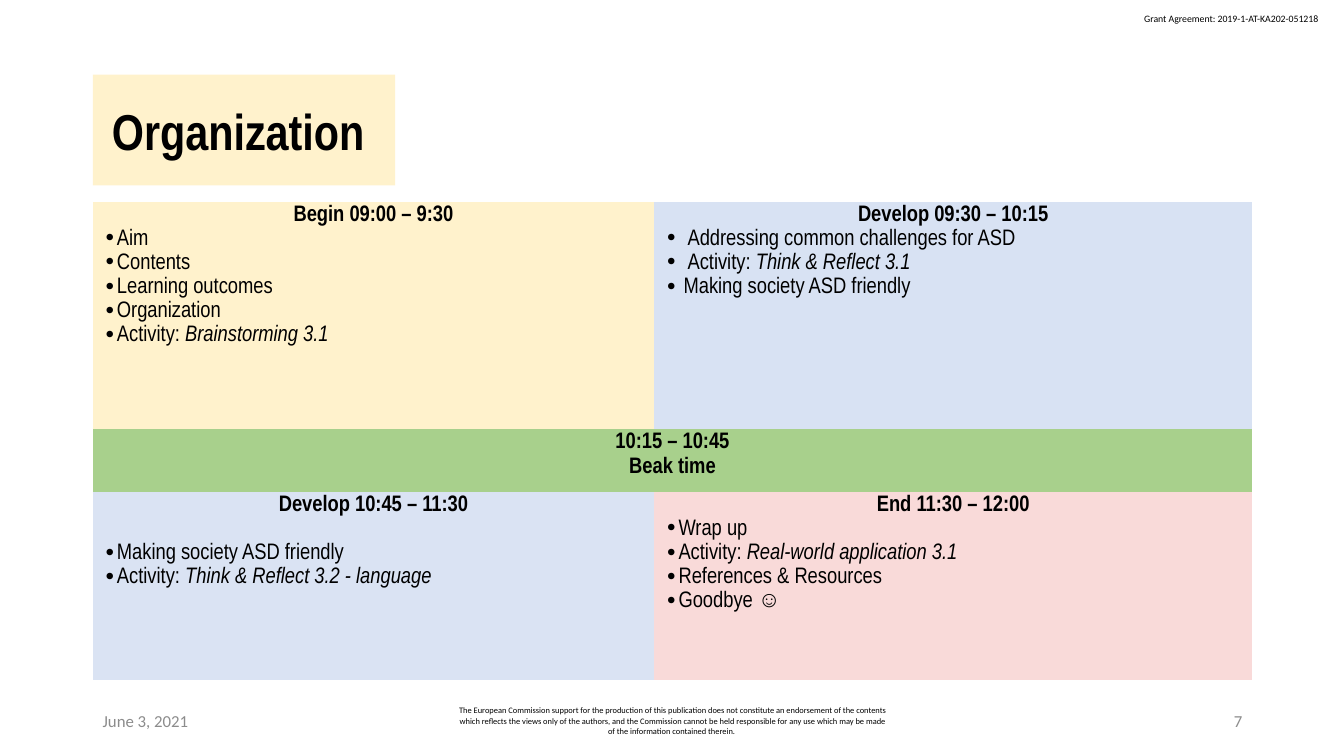
"""Build the workshop organization slide with its timetable."""
from lxml import etree
from pptx import Presentation
from pptx.dml.color import RGBColor
from pptx.enum.text import MSO_ANCHOR, MSO_AUTO_SIZE, PP_ALIGN as AL
from pptx.oxml.ns import qn
from pptx.util import Inches as In, Pt

NARROW, SANS = "Arial Narrow", "Calibri"
BLACK, GREY = "000000", "8C8C8C"
CREAM, BLUE, GREEN, PALE_BLUE, PINK = "FFF2CC", "D8E2F3", "A8D08C", "DAE3F3", "F9DAD9"
LEFT, COLS, ROWS = 0.92, (5.57, 5.93), (2.26, 0.62, 1.87)
WIDTH = sum(COLS)
NO_STYLE = "{2D5ABB26-0587-4C30-8999-92F81FD0307C}"


def rgb(code):
    return RGBColor.from_string(code)


def add_run(p, text, size, font=NARROW, color=BLACK, bold=False, italic=False):
    r = p.add_run()
    r.text = text
    r.font.name, r.font.size = font, Pt(size)
    r.font.bold, r.font.italic = bold, italic
    r.font.color.rgb = rgb(color)


prs = Presentation()
prs.slide_width, prs.slide_height = In(13.33), In(7.5)
s = prs.slides.add_slide(prs.slide_layouts[5])

title = s.shapes.title
title.left, title.top, title.width, title.height = In(LEFT), In(0.74), In(3), In(1.1)
title.fill.solid()
title.fill.fore_color.rgb = rgb(CREAM)
tf = title.text_frame
tf.auto_size, tf.vertical_anchor = MSO_AUTO_SIZE.NONE, MSO_ANCHOR.MIDDLE
tf.margin_left = tf.margin_right = In(0.13)
tf.margin_top = tf.margin_bottom = In(0.07)
p = tf.paragraphs[0]
p.alignment = AL.CENTER
add_run(p, "Organization ", 36, bold=True)

disclaimer = (
    "The European Commission support for the production of this publication does not "
    "constitute an endorsement of the contents which reflects the views only of the authors, "
    "and the Commission cannot be held responsible for any use which may be made of the "
    "information contained therein. "
)
footer_top, footer_height = 6.95, 0.4
small_texts = [
    ("Grant Agreement: 2019-1-AT-KA202-051218", 11.25, 0.08, 1.97, 0.22, 7, BLACK, AL.LEFT, False),
    ("June 3, 2021", LEFT, footer_top, 3, footer_height, 12, GREY, AL.LEFT, True),
    (disclaimer, 4.42, footer_top, 4.5, footer_height, 6, BLACK, AL.CENTER, True),
    ("7", LEFT + WIDTH - 3, footer_top, 3, footer_height, 12, GREY, AL.RIGHT, True),
]
for text, x, y, w, h, size, color, align, wrap in small_texts:
    tf = s.shapes.add_textbox(In(x), In(y), In(w), In(h)).text_frame
    tf.word_wrap = wrap
    tf.vertical_anchor = MSO_ANCHOR.MIDDLE if wrap else MSO_ANCHOR.TOP
    p = tf.paragraphs[0]
    p.alignment = align
    add_run(p, text, size, SANS, color)

frame = s.shapes.add_table(len(ROWS), len(COLS), In(LEFT), In(2), In(WIDTH), In(sum(ROWS)))
frame.element.find(".//" + qn("a:tableStyleId")).text = NO_STYLE
table = frame.table
table.first_row = table.horz_banding = False
for column, width in zip(table.columns, COLS):
    column.width = In(width)
for row, height in zip(table.rows, ROWS):
    row.height = In(height)
table.cell(1, 0).merge(table.cell(1, 1))

sessions = [
    (0, 0, CREAM, ["Begin 09:00 – 9:30"], AL.LEFT, 0,
     [("Aim", "", 0.14), ("Contents", "", 0.14), ("Learning outcomes", "", 0.14),
      ("Organization", "", 0.14), ("Activity: ", "Brainstorming 3.1", 0.14)]),
    (0, 1, BLUE, ["Develop 09:30 – 10:15"], AL.JUSTIFY, 0,
     [("Addressing common challenges for ASD", "", 0.23),
      ("Activity: ", "Think & Reflect 3.1", 0.23),
      ("Making society ASD friendly", "", 0.19)]),
    (1, 0, GREEN, ["10:15 – 10:45", "Beak time"], AL.CENTER, 0, []),
    (2, 0, PALE_BLUE, ["Develop 10:45 – 11:30"], AL.JUSTIFY, 17.3,
     [("Making society ASD friendly", "", 0.14),
      ("Activity: ", "Think & Reflect 3.2 - language", 0.14)]),
    (2, 1, PINK, ["End 11:30 – 12:00"], AL.LEFT, 0,
     [("Wrap up", "", 0.14), ("Activity: ", "Real-world application 3.1", 0.14),
      ("References & Resources", "", 0.14), ("Goodbye ☺", "", 0.14)]),
]
for row, col, fill, headings, align, gap, items in sessions:
    cell = table.cell(row, col)
    cell.fill.solid()
    cell.fill.fore_color.rgb = rgb(fill)
    cell.margin_left = cell.margin_right = In(0.1)
    cell.margin_top = cell.margin_bottom = 0
    tf = cell.text_frame
    for i, heading in enumerate(headings):
        p = tf.add_paragraph() if i else tf.paragraphs[0]
        p.alignment, p.line_spacing = AL.CENTER, 1.15
        add_run(p, heading, 16, bold=True)
    for i, (text, activity, indent) in enumerate(items):
        p = tf.add_paragraph()
        p.alignment, p.line_spacing = align, 1.15
        p.space_before = Pt(0 if i else gap)
        pPr = p._p.get_or_add_pPr()
        pPr.set("marL", str(In(indent)))
        pPr.set("indent", str(-In(indent)))
        bullet_color = etree.SubElement(pPr, qn("a:buClr"))
        etree.SubElement(bullet_color, qn("a:srgbClr"), val=BLACK)
        etree.SubElement(pPr, qn("a:buChar"), char="∙")
        add_run(p, text, 16)
        if activity:
            add_run(p, activity, 16, italic=True)

prs.save("out.pptx")
